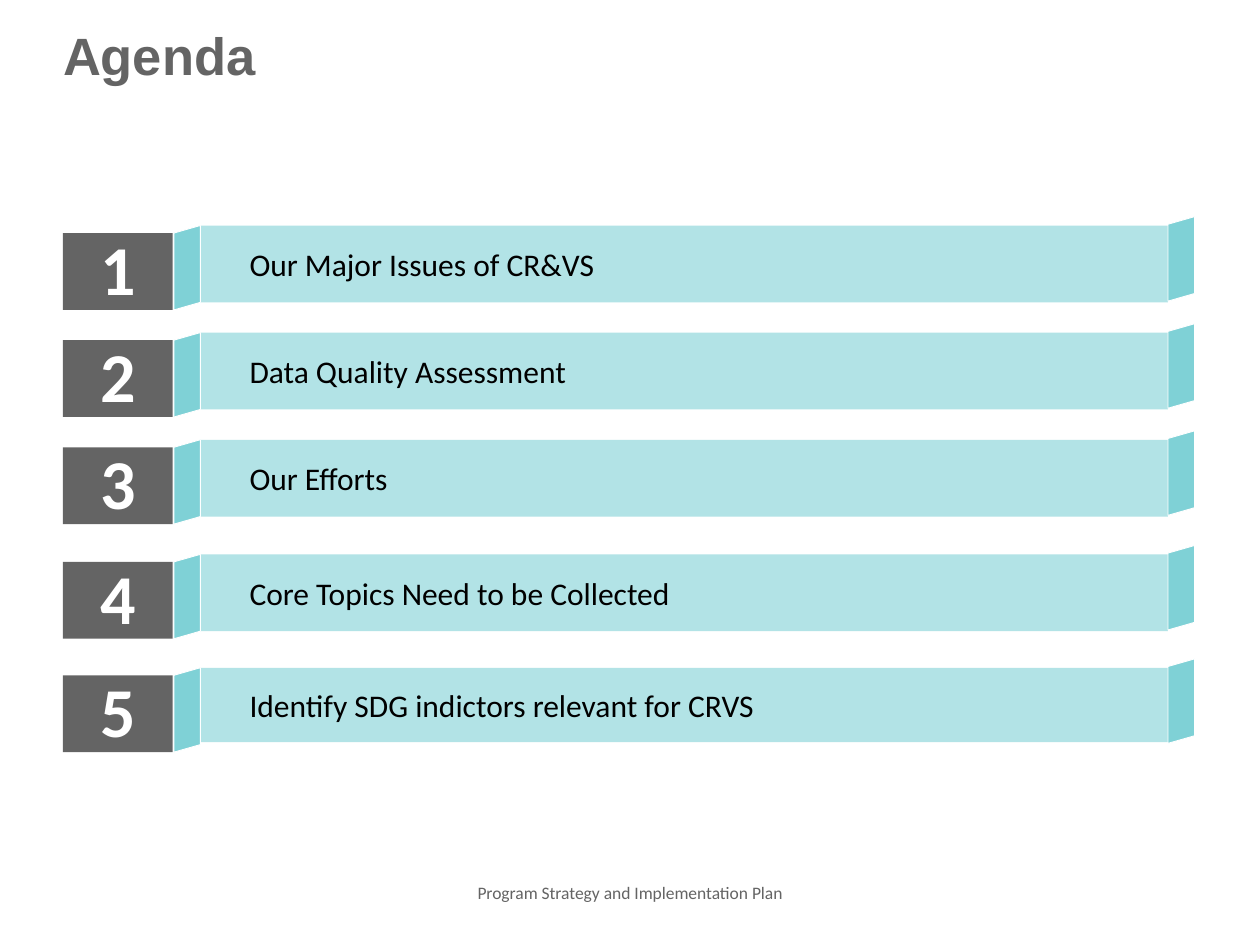
from dataclasses import dataclass

from pptx import Presentation
from pptx.dml.color import RGBColor
from pptx.enum.shapes import MSO_SHAPE
from pptx.enum.text import MSO_ANCHOR, PP_ALIGN
from pptx.util import Inches, Pt


@dataclass(frozen=True)
class Theme:
    gray: RGBColor = RGBColor(0x64, 0x64, 0x64)
    bar: RGBColor = RGBColor(0xB2, 0xE3, 0xE6)
    fold: RGBColor = RGBColor(0x7F, 0xD1, 0xD6)
    white: RGBColor = RGBColor(0xFF, 0xFF, 0xFF)
    black: RGBColor = RGBColor(0, 0, 0)
    heading_font: str = "Arial"
    body_font: str = "Calibri"
    title_size: int = 30
    number_size: int = 40
    topic_size: int = 18
    footer_size: int = 10


theme = Theme()


def write(shape, text, font_name, size, color, bold=False,
          align=PP_ALIGN.LEFT, anchor=MSO_ANCHOR.MIDDLE, left=0, top=0):
    """Put one formatted paragraph in a shape and return it."""
    frame = shape.text_frame
    frame.text = text
    frame.word_wrap = True
    frame.vertical_anchor = anchor
    frame.margin_left, frame.margin_top = Inches(left), Inches(top)
    frame.margin_right = frame.margin_bottom = 0
    paragraph = frame.paragraphs[0]
    paragraph.alignment = align
    font = paragraph.runs[0].font
    font.name, font.size, font.bold = font_name, Pt(size), bold
    font.color.rgb = color
    return paragraph


def add_block(left, top, width, height, color):
    """Add a plain filled rectangle."""
    block = slide.shapes.add_shape(
        MSO_SHAPE.RECTANGLE, Inches(left), Inches(top), Inches(width), Inches(height))
    block.shadow.inherit = False
    block.fill.solid()
    block.fill.fore_color.rgb = color
    block.line.fill.background()
    return block


presentation = Presentation()
presentation.slide_width, presentation.slide_height = Inches(10), Inches(7.5)
slide = presentation.slides.add_slide(presentation.slide_layouts[5])

# Title
title = slide.shapes.title
title.left, title.top = Inches(0.5), Inches(0.22)
title.width, title.height = Inches(9), Inches(0.46)
paragraph = write(title, "Agenda", theme.heading_font, theme.title_size, theme.gray,
                  bold=True, anchor=MSO_ANCHOR.TOP, top=0.04)
paragraph.line_spacing = 0.85

# Agenda rows: top of the bar, height of the bar, topic
agenda = [
    (1.79, 0.61, "Our Major Issues of CR&VS"),
    (2.64, 0.61, "Data Quality Assessment"),
    (3.49, 0.61, "Our Efforts"),
    (4.40, 0.61, "Core Topics Need to be Collected"),
    (5.30, 0.59, "Identify SDG indictors relevant for CRVS"),
]
number_left, number_width = 0.5, 0.87
bar_left, bar_width = 1.59, 7.68
row_height, fold_width, fold_rise = 0.61, 0.21, 0.06

for number, (top, bar_height, topic) in enumerate(agenda, start=1):
    # Topic bar
    bar = add_block(bar_left, top, bar_width, bar_height, theme.bar)
    write(bar, topic, theme.body_font, theme.topic_size, theme.black, left=0.39)

    # Number block
    block = add_block(number_left, top + fold_rise, number_width, row_height, theme.gray)
    paragraph = write(block, str(number), theme.body_font, theme.number_size, theme.white,
                      bold=True, align=PP_ALIGN.CENTER, top=0.04)
    paragraph.line_spacing = 0.85
    paragraph.space_after = Pt(6)

    # Slanted folds on both sides of the bar
    for left, low in ((bar_left - fold_width, top + fold_rise),
                      (bar_left + bar_width, top - 0.01)):
        right, high = left + fold_width, low - fold_rise
        corners = [(left, low), (right, high),
                   (right, high + row_height), (left, low + row_height)]
        points = [(Inches(x), Inches(y)) for x, y in corners]
        builder = slide.shapes.build_freeform(*points[0])
        builder.add_line_segments(points[1:], close=True)
        fold = builder.convert_to_shape()
        fold.shadow.inherit = False
        fold.fill.solid()
        fold.fill.fore_color.rgb = theme.fold
        fold.line.color.rgb = theme.white
        fold.line.width = Pt(0.5)

# Footer
footer = slide.shapes.add_textbox(Inches(3.12), Inches(7), Inches(3.76), Inches(0.22))
write(footer, "Program Strategy and Implementation Plan", theme.body_font,
      theme.footer_size, theme.gray, align=PP_ALIGN.CENTER, anchor=MSO_ANCHOR.TOP)

presentation.save("out.pptx")
